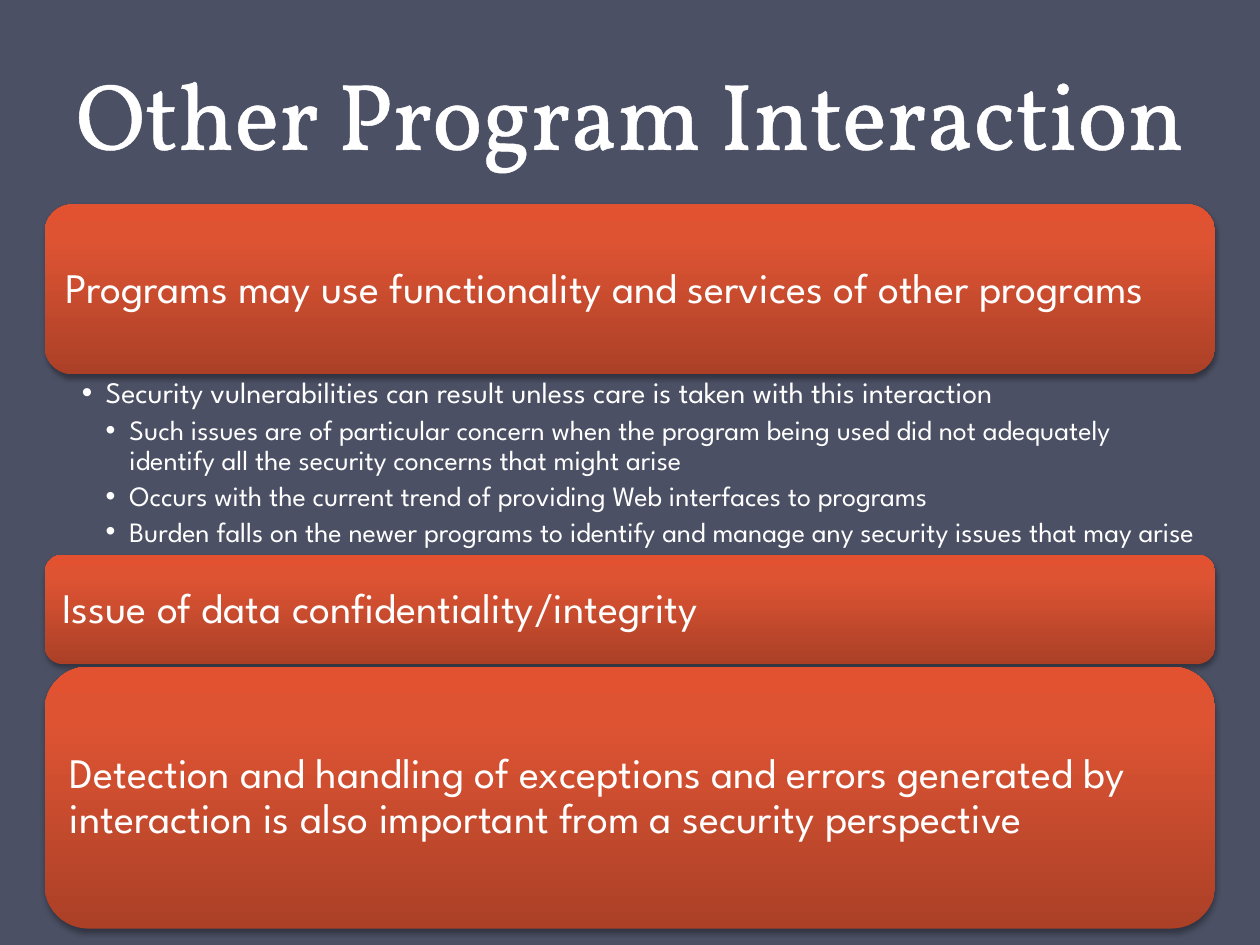
from copy import deepcopy
from dataclasses import dataclass

from pptx import Presentation
from pptx.dml.color import RGBColor
from pptx.enum.shapes import MSO_SHAPE
from pptx.enum.text import MSO_ANCHOR, MSO_AUTO_SIZE, PP_ALIGN
from pptx.oxml import parse_xml
from pptx.oxml.ns import nsdecls, qn
from pptx.util import Cm, Pt


@dataclass(frozen=True)
class Theme:
    background: str = "4B5064"
    text: str = "FFFFFF"
    shadow: str = "000000"
    card_stops: tuple = ((0, "AB4027"), (0.8, "DE5433"), (1, "E35230"))
    title_font: str = "Vollkorn"
    body_font: str = "League Spartan"
    title_size: int = 54
    card_size: int = 24
    list_sizes: tuple = (17, 16)


@dataclass(frozen=True)
class Box:
    """A region of the slide, in centimetres."""
    left: float
    top: float
    width: float
    height: float

    def place(self, shape):
        shape.left, shape.top = Cm(self.left), Cm(self.top)
        shape.width, shape.height = Cm(self.width), Cm(self.height)


THEME = Theme()
TITLE = "Other Program Interaction"
CARDS = (
    (4.12, 3.43, "Programs may use functionality and services of other programs"),
    (11.18, 2.21, "Issue of data confidentiality/integrity"),
    (13.44, 5.28, "Detection and handling of exceptions and errors generated by "
                  "interaction is also important from a security perspective"),
)
CONCERNS = (
    (1, "Security vulnerabilities can result unless care is taken with this interaction"),
    (2, "Such issues are of particular concern when the program being used did not "
        "adequately identify all the security concerns that might arise"),
    (2, "Occurs with the current trend of providing Web interfaces to programs"),
    (2, "Burden falls on the newer programs to identify and manage any security "
        "issues that may arise"),
)


def style_runs(para, font_name, size):
    for span in para.runs:
        span.font.name = font_name
        span.font.size = Pt(size)
        span.font.color.rgb = RGBColor.from_string(THEME.text)


def set_frame(frame, anchor, left, top, right, bottom):
    frame.word_wrap = True
    frame.auto_size = MSO_AUTO_SIZE.NONE
    frame.vertical_anchor = anchor
    frame.margin_left, frame.margin_right = Cm(left), Cm(right)
    frame.margin_top, frame.margin_bottom = Cm(top), Cm(bottom)


def fill_title(title, box):
    box.place(title)
    frame = title.text_frame
    frame.text = TITLE
    set_frame(frame, MSO_ANCHOR.BOTTOM, 0.25, 0.13, 0.25, 0.13)
    para = frame.paragraphs[0]
    para.alignment = PP_ALIGN.CENTER
    para.line_spacing = Pt(58)
    style_runs(para, THEME.title_font, THEME.title_size)
    outline = parse_xml(
        f'<a:ln {nsdecls("a")} w="{Pt(1.45)}"><a:solidFill>'
        f'<a:srgbClr val="{THEME.text}"/></a:solidFill></a:ln>')
    para.runs[0].font._element.insert(0, outline)


def fill_list(body, box):
    box.place(body)
    frame = body.text_frame
    frame.text = "\n".join(text for _, text in CONCERNS)
    set_frame(frame, MSO_ANCHOR.TOP, 0.75, 0.05, 0.3, 0.05)
    indent = Cm(0.48)
    for para, (level, _) in zip(frame.paragraphs, CONCERNS):
        size = THEME.list_sizes[level - 1]
        para.level = level
        para.line_spacing = 0.9
        para.space_before = Pt(0)
        para.space_after = Pt(round(size * 0.2, 1))
        style_runs(para, THEME.body_font, size)
        properties = para._p.get_or_add_pPr()
        properties.set("marL", str(indent * level))
        properties.set("indent", str(-indent))
        properties.append(parse_xml(f'<a:buChar {nsdecls("a")} char="•"/>'))


def paint_card(card):
    """Give the card its three-stop gradient and soft shadow."""
    card.fill.gradient()
    card.fill.gradient_angle = 90
    properties = card._element.spPr
    stop_list = properties.find(".//" + qn("a:gsLst"))
    stop_list.append(deepcopy(stop_list[-1]))
    for stop, (position, color) in zip(card.fill.gradient_stops, THEME.card_stops):
        stop.position = position
        stop.color.rgb = RGBColor.from_string(color)
    card.line.fill.background()
    card.shadow.inherit = False
    properties.find(qn("a:effectLst")).append(parse_xml(
        f'<a:outerShdw {nsdecls("a")} blurRad="{Pt(3.1)}" dist="{Pt(1.8)}" '
        f'dir="5400000" rotWithShape="0"><a:srgbClr val="{THEME.shadow}">'
        '<a:alpha val="35000"/></a:srgbClr></a:outerShdw>'))


def add_card(page, box, text):
    card = page.shapes.add_shape(MSO_SHAPE.ROUNDED_RECTANGLE, 0, 0, 0, 0)
    box.place(card)
    paint_card(card)
    frame = card.text_frame
    frame.text = text
    set_frame(frame, MSO_ANCHOR.MIDDLE, 0.25, 0.25, 0.25, 0.25)
    para = frame.paragraphs[0]
    para.alignment = PP_ALIGN.LEFT
    para.line_spacing = 0.9
    style_runs(para, THEME.body_font, THEME.card_size)


def main():
    deck = Presentation()
    deck.slide_width, deck.slide_height = Cm(25.4), Cm(19.05)
    page = deck.slides.add_slide(deck.slide_layouts[1])
    page.background.fill.solid()
    page.background.fill.fore_color.rgb = RGBColor.from_string(THEME.background)

    left, width = 0.9, 23.6
    fill_title(page.shapes.title, Box(0, 0, 25.4, 3.53))
    fill_list(page.placeholders[1], Box(left, 7.57, width, 3.61))
    for top, height, text in CARDS:
        add_card(page, Box(left, top, width, height), text)
    deck.save("out.pptx")


if __name__ == "__main__":
    main()
